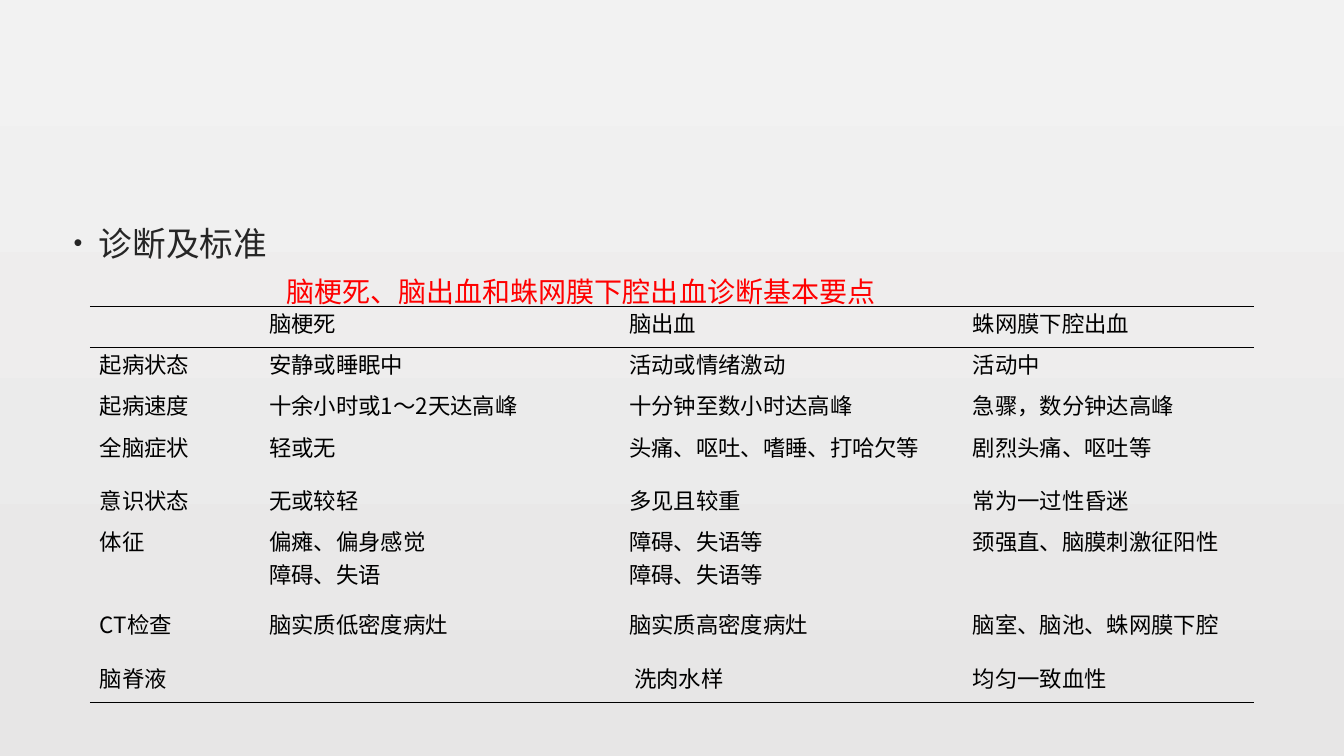
from lxml.etree import SubElement
from pptx import Presentation
from pptx.dml.color import RGBColor
from pptx.enum.text import MSO_AUTO_SIZE, PP_ALIGN
from pptx.oxml.ns import qn
from pptx.util import Inches, Pt

FONT = "Noto Sans CJK SC"
COLORS = {"top": "F2F2F2", "bottom": "E7E6E6", "heading": "262626",
          "caption": "FF0000", "table": "000000"}

HEADING = "诊断及标准"
CAPTION = "脑梗死、脑出血和蛛网膜下腔出血诊断基本要点"
DIAGNOSIS_ROWS = [
    ("", "脑梗死", "脑出血", "蛛网膜下腔出血"),
    ("起病状态", "安静或睡眠中", "活动或情绪激动", "活动中"),
    ("起病速度", "十余小时或1～2天达高峰", "十分钟至数小时达高峰", "急骤，数分钟达高峰"),
    ("全脑症状", "轻或无", "头痛、呕吐、嗜睡、打哈欠等", "剧烈头痛、呕吐等"),
    ("意识状态", "无或较轻", "多见且较重", "常为一过性昏迷"),
    ("体征", "偏瘫、偏身感觉\n障碍、失语", "障碍、失语等\n障碍、失语等", "颈强直、脑膜刺激征阳性"),
    ("CT检查", "脑实质低密度病灶", "脑实质高密度病灶", "脑室、脑池、蛛网膜下腔"),
    ("脑脊液", "", " 洗肉水样", "均匀一致血性"),
]
COLUMN_WIDTHS = [1.68, 3.57, 3.41, 2.89]
ROW_HEIGHTS = [0.41, 0.41, 0.41, 0.53, 0.41, 0.82, 0.53, 0.41]
RULED_EDGES = {0, 1, len(DIAGNOSIS_ROWS)}  # row edges that carry a line


def set_attributes(target, values):
    for name, value in values.items():
        setattr(target, name, value)


def style_text(paragraph, size, color):
    for run in paragraph.runs:
        set_attributes(run.font, {"size": Pt(size), "name": FONT, "bold": False})
        run.font.color.rgb = RGBColor.from_string(COLORS[color])
        SubElement(run.font._element, qn("a:ea"), typeface=FONT)


def fill_frame(shape, text, size, color):
    frame = shape.text_frame
    margins = dict.fromkeys(
        ("margin_left", "margin_top", "margin_right", "margin_bottom"), Inches(0.06))
    set_attributes(frame, {"text": text, "word_wrap": True,
                           "auto_size": MSO_AUTO_SIZE.SHAPE_TO_FIT_TEXT, **margins})
    paragraph = frame.paragraphs[0]
    paragraph.line_spacing = 2.0
    style_text(paragraph, size, color)
    return paragraph


def set_borders(cell, row_index):
    ruled = {"a:lnT": row_index in RULED_EDGES, "a:lnB": row_index + 1 in RULED_EDGES}
    properties = cell._tc.get_or_add_tcPr()
    for side in ("a:lnL", "a:lnR", "a:lnT", "a:lnB"):
        line = SubElement(properties, qn(side), w=str(Pt(1)))
        if ruled.get(side):
            fill = SubElement(line, qn("a:solidFill"))
            SubElement(fill, qn("a:srgbClr"), val=COLORS["table"])
        else:
            SubElement(line, qn("a:noFill"))


def add_diagnosis_table(slide):
    table = slide.shapes.add_table(
        len(ROW_HEIGHTS), len(COLUMN_WIDTHS), Inches(0.89), Inches(3.04),
        Inches(sum(COLUMN_WIDTHS)), Inches(sum(ROW_HEIGHTS))).table
    set_attributes(table, {"first_row": False, "horz_banding": False})
    for column, width in zip(table.columns, COLUMN_WIDTHS):
        column.width = Inches(width)
    for row_index, (row, height) in enumerate(zip(table.rows, ROW_HEIGHTS)):
        row.height = Inches(height)
        for cell, text in zip(row.cells, DIAGNOSIS_ROWS[row_index]):
            set_attributes(cell, {"text": text, "margin_left": Inches(0.1),
                                  "margin_right": Inches(0.1),
                                  "margin_top": 0, "margin_bottom": 0})
            for paragraph in cell.text_frame.paragraphs:
                paragraph.alignment = PP_ALIGN.JUSTIFY
                style_text(paragraph, 16, "table")
            set_borders(cell, row_index)
            cell.fill.background()


def main():
    deck = Presentation()
    set_attributes(deck, {"slide_width": Inches(13.33), "slide_height": Inches(7.5)})
    slide = deck.slides.add_slide(deck.slide_layouts[1])
    title = slide.shapes.title._element
    title.getparent().remove(title)

    # Background, light at the top
    backdrop = slide.background.fill
    backdrop.gradient()
    backdrop.gradient_angle = 270
    for stop, name, position in zip(backdrop.gradient_stops, ("top", "bottom"), (0, 1)):
        stop.color.rgb = RGBColor.from_string(COLORS[name])
        stop.position = position

    # Bulleted heading
    heading = slide.placeholders[1]
    set_attributes(heading, {"left": Inches(0.67), "top": Inches(1.75),
                             "width": Inches(12), "height": Inches(1.73)})
    bullet_line = fill_frame(heading, HEADING, 24, "heading")
    bullet_line.space_before = Pt(10)
    properties = bullet_line._p.get_or_add_pPr()
    properties.set("marL", str(Inches(0.25)))
    properties.set("indent", str(-Inches(0.25)))
    SubElement(properties, qn("a:buSzPct"), val="75000")
    SubElement(properties, qn("a:buFont"), typeface="Arial")
    SubElement(properties, qn("a:buChar"), char="•")

    # Table caption and table
    caption = slide.shapes.add_textbox(Inches(2.78), Inches(2.33), Inches(7.98), Inches(0.79))
    fill_frame(caption, CAPTION, 20, "caption")
    add_diagnosis_table(slide)

    deck.save("out.pptx")


if __name__ == "__main__":
    main()
